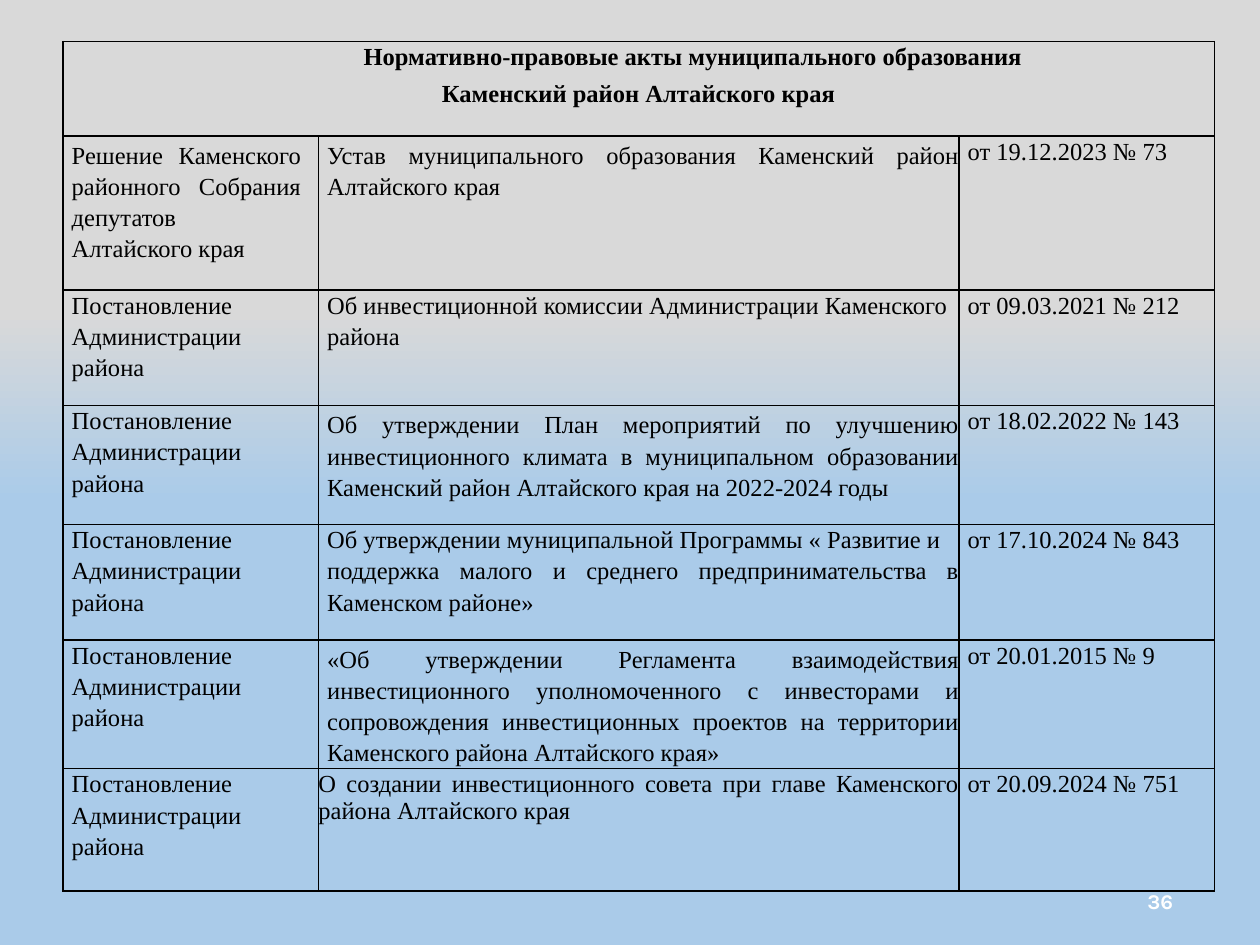
from lxml import etree
from pptx import Presentation
from pptx import util as u
from pptx.dml import color
from pptx.enum import text
from pptx.oxml import ns

COLORS = {"grey": "D9D9D9", "blue": "AACBE9", "ink": "000000", "white": "FFFFFF"}
SERIF = "Times New Roman"
COLUMN_WIDTHS = [146, 366, 146]
ROW_HEIGHTS = [54, 88, 66, 68, 66, 73.5, 70]
INDENT = 5
ISSUER_RIGHT_MARGIN = 10
LEFT, CENTER = text.PP_ALIGN.LEFT, text.PP_ALIGN.CENTER
RIGHT, JUSTIFY = text.PP_ALIGN.RIGHT, text.PP_ALIGN.JUSTIFY


def line(content, align=LEFT, **options):
    return {"content": content, "align": align, **options}


def block(content):
    return line(content, JUSTIFY, spacing=1.15)


HEADING = [
    line("Нормативно-правовые акты муниципального образования", CENTER,
         indent=62, spacing=u.Pt(16.4), bold=True),
    line("Каменский район Алтайского края", CENTER, indent=0, before=6, bold=True),
]
DECREE = [line("Постановление"), line("Администрации района", spacing=1.15)]
ACTS = [
    ([block("Решение Каменского районного Собрания депутатов Алтайского края")],
     [block("Устав муниципального образования Каменский район Алтайского края")],
     "от 19.12.2023 № 73"),
    (DECREE,
     [line("Об инвестиционной комиссии Администрации Каменского"),
      line("района", before=2.5)],
     "от 09.03.2021 № 212"),
    (DECREE,
     [block("Об утверждении План мероприятий по улучшению инвестиционного климата "
            "в муниципальном образовании Каменский район Алтайского края "
            "на 2022-2024 годы")],
     "от 18.02.2022 № 143"),
    (DECREE,
     [line("Об утверждении муниципальной Программы « Развитие и"),
      block("поддержка малого и среднего предпринимательства в Каменском районе»")],
     "от 17.10.2024 № 843"),
    (DECREE,
     [block("«Об утверждении Регламента взаимодействия инвестиционного "
            "уполномоченного с инвесторами и сопровождения инвестиционных "
            "проектов на территории Каменского района Алтайского края»")],
     "от 20.01.2015 № 9"),
    (DECREE,
     [line("О создании инвестиционного совета при главе Каменского "
           "района Алтайского края", JUSTIFY, indent=0)],
     "от 20.09.2024 № 751"),
]


def paint_background(slide):
    fill = slide.background.fill
    fill.gradient()
    fill.gradient_angle = 270
    for stop, position, name in zip(fill.gradient_stops, (0.33, 0.53), ("grey", "blue")):
        stop.position = position
        stop.color.rgb = color.RGBColor.from_string(COLORS[name])


def write_lines(frame, lines, size=14, font=SERIF, ink="ink"):
    for index, item in enumerate(lines):
        paragraph = frame.paragraphs[0] if index == 0 else frame.add_paragraph()
        properties = paragraph._p.get_or_add_pPr()
        properties.set("marL", str(int(u.Pt(item.get("indent", INDENT)))))
        properties.set("indent", "0")
        paragraph.alignment = item["align"]
        paragraph.line_spacing = item.get("spacing", 1.0)
        paragraph.space_before = u.Pt(item.get("before", 0))
        run = paragraph.add_run()
        run.text = item["content"]
        run.font.size = u.Pt(size)
        run.font.name = font
        run.font.bold = item.get("bold", False)
        run.font.color.rgb = color.RGBColor.from_string(COLORS[ink])


def clear_margins(box):
    box.margin_left = box.margin_right = box.margin_top = box.margin_bottom = 0


def style_cell(cell, top):
    clear_margins(cell)
    cell.margin_top = u.Pt(top)
    cell.fill.background()
    properties = cell._tc.get_or_add_tcPr()
    for index, side in enumerate(("lnL", "lnR", "lnT", "lnB")):
        border = etree.Element(ns.qn(f"a:{side}"), w=str(int(u.Pt(1))))
        solid = etree.SubElement(border, ns.qn("a:solidFill"))
        etree.SubElement(solid, ns.qn("a:srgbClr"), val=COLORS["ink"])
        properties.insert(index, border)


def add_acts_table(slide):
    shape = slide.shapes.add_table(
        len(ROW_HEIGHTS), len(COLUMN_WIDTHS), u.Pt(36), u.Pt(23.8),
        u.Pt(sum(COLUMN_WIDTHS)), u.Pt(sum(ROW_HEIGHTS)))
    table = shape.table
    table.first_row = table.horz_banding = False
    for column, width in zip(table.columns, COLUMN_WIDTHS):
        column.width = u.Pt(width)
    for index, (row, height) in enumerate(zip(table.rows, ROW_HEIGHTS)):
        row.height = u.Pt(height)
        for cell in row.cells:
            style_cell(cell, 1.4 if index else 0)
    table.cell(0, 0).merge(table.cell(0, len(COLUMN_WIDTHS) - 1))
    write_lines(table.cell(0, 0).text_frame, HEADING)
    for row, (issuer, title, date) in enumerate(ACTS, start=1):
        table.cell(row, 0).margin_right = u.Pt(ISSUER_RIGHT_MARGIN)
        for column, lines in enumerate((issuer, title, [line(date)])):
            write_lines(table.cell(row, column).text_frame, lines)


def add_page_number(slide, number):
    shape = slide.shapes.add_textbox(u.Pt(508.3), u.Pt(500.4), u.Pt(162), u.Pt(28.8))
    frame = shape.text_frame
    frame.word_wrap = True
    frame.vertical_anchor = text.MSO_ANCHOR.MIDDLE
    clear_margins(frame)
    write_lines(frame, [line(number, RIGHT, indent=3, bold=True)],
                size=12, font="Karla", ink="white")


def main():
    presentation = Presentation()
    presentation.slide_width = u.Pt(720)
    presentation.slide_height = u.Pt(540)
    slide = presentation.slides.add_slide(presentation.slide_layouts[6])
    paint_background(slide)
    add_acts_table(slide)
    add_page_number(slide, "36")
    presentation.save("out.pptx")


if __name__ == "__main__":
    main()
